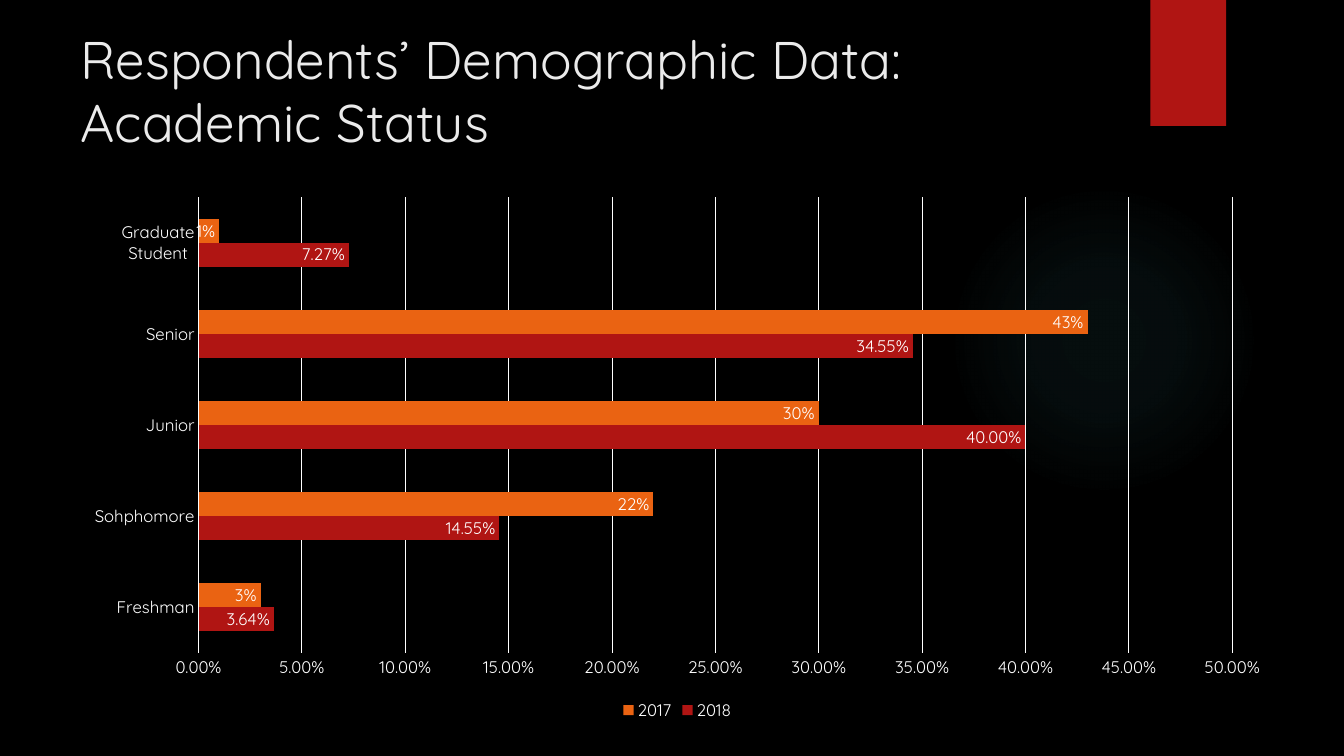
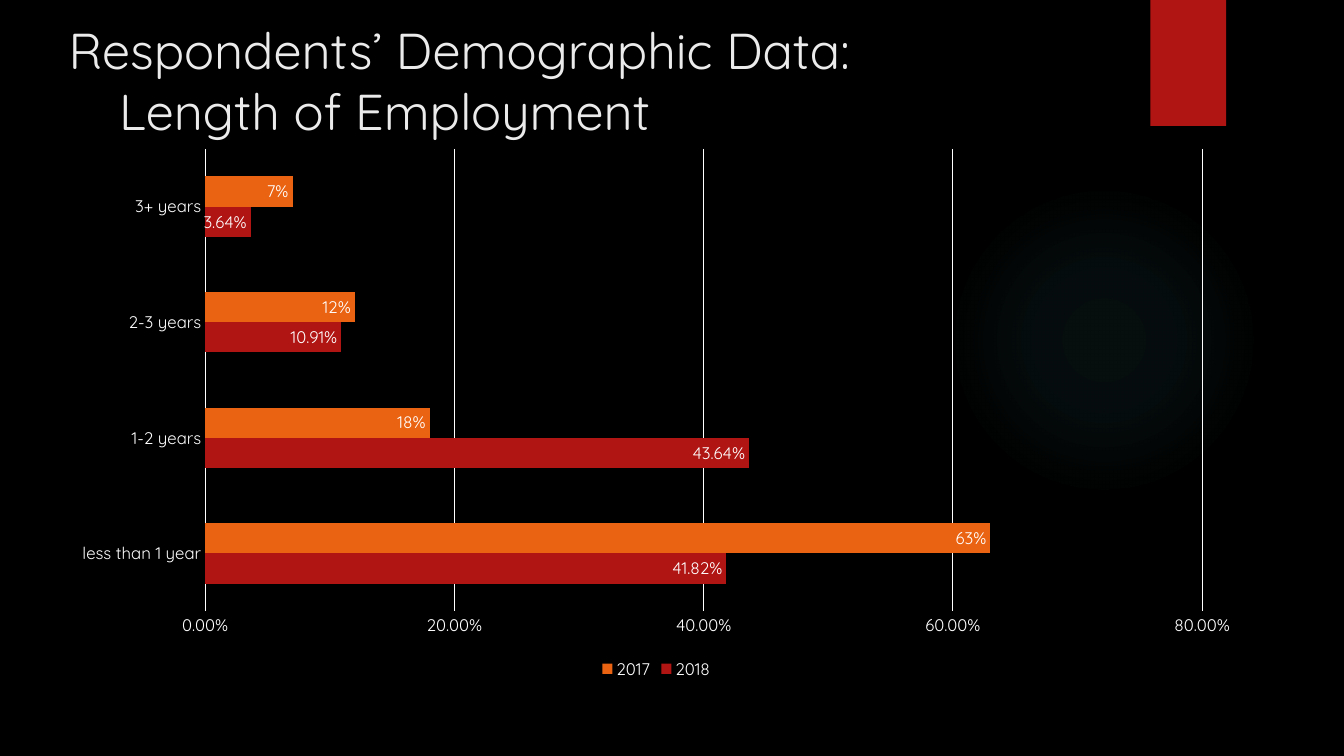
from lxml import etree
from pptx import Presentation
from pptx.chart.data import CategoryChartData
from pptx.dml.color import RGBColor
from pptx.enum.chart import XL_CHART_TYPE, XL_LABEL_POSITION, XL_LEGEND_POSITION, XL_TICK_MARK
from pptx.enum.shapes import MSO_SHAPE
from pptx.enum.text import MSO_ANCHOR, MSO_AUTO_SIZE, PP_ALIGN
from pptx.oxml.ns import qn
from pptx.util import Pt

BARS = XL_CHART_TYPE.BAR_CLUSTERED
IN_END = XL_LABEL_POSITION.INSIDE_END
BOTTOM = XL_LEGEND_POSITION.BOTTOM
NO_TICK = XL_TICK_MARK.NONE
RECT, OVAL = MSO_SHAPE.RECTANGLE, MSO_SHAPE.OVAL
TOP, LEFT, FIXED = MSO_ANCHOR.TOP, PP_ALIGN.LEFT, MSO_AUTO_SIZE.NONE

FACE = "Quicksand"
BLACK, WHITE, PALE = "000000", "FFFFFF", "EBEBEB"
RED, ORANGE, TEAL = "B01513", "EA6312", "50B9C1"
GLOW = [(0, 7), (36, 6), (69, 0)]  # stop %, opacity %

# Series style: name, colour, label format
YEARS = [("2018", RED, "0.00%"), ("2017", ORANGE, "0%")]

# Boxes are left, top, width, height in points
SLIDES = [
    {
        "title": "Respondents’ Demographic Data: Academic Status",
        "size": 37.8, "indent": 0, "head": (50.4, 15.1, 780.5, 70.6),
        "box": (50.4, 133.2, 866.9, 384.5), "max": 0.5, "step": 0.05,
        "rows": [
            ("Freshman", 0.0364, 0.03),
            ("Sohphomore", 0.1455, 0.22),
            ("Junior", 0.4, 0.3),
            ("Senior", 0.3455, 0.43),
            ("Graduate Student", 0.0727, 0.01),
        ],
    },
    {
        "title": "Respondents’ Demographic Data:\vLength of Employment",
        "size": 36, "indent": 36, "head": (41.8, 10.1, 780.5, 62.6),
        "box": (41.8, 98.6, 853.9, 389.5), "max": 0.8, "step": 0.2,
        "rows": [
            ("less than 1 year", 0.4182, 0.63),
            ("1-2 years", 0.4364, 0.18),
            ("2-3 years", 0.1091, 0.12),
            ("3+ years", 0.0364, 0.07),
        ],
    },
]


def rgb(code):
    return RGBColor.from_string(code)


def style(font, size=12, color=WHITE):
    font.name, font.size, font.bold = FACE, Pt(size), False
    font.color.rgb = rgb(color)


def write(frame, text, size, color, indent=0):
    frame.text = text
    frame.word_wrap, frame.auto_size = True, FIXED
    frame.vertical_anchor = TOP
    para = frame.paragraphs[0]
    para.alignment = LEFT
    # Hanging indent: only the lines after the first move right
    props = para._p.get_or_add_pPr()
    props.set("marL", str(Pt(indent)))
    props.set("indent", str(-Pt(indent)))
    for run in para.runs:
        style(run.font, size, color)


def glow(shape):
    """Fill with a soft circular gradient."""
    shape.fill.background()
    old = shape.element.spPr.find(qn("a:noFill"))
    grad = etree.Element(qn("a:gradFill"), rotWithShape="1")
    stops = etree.SubElement(grad, qn("a:gsLst"))
    for pos, alpha in GLOW:
        stop = etree.SubElement(stops, qn("a:gs"), pos=str(pos * 1000))
        tint = etree.SubElement(stop, qn("a:srgbClr"), val=TEAL)
        etree.SubElement(tint, qn("a:alpha"), val=str(alpha * 1000))
    focus = etree.SubElement(grad, qn("a:path"), path="circle")
    sides = dict.fromkeys("ltrb", "50000")
    etree.SubElement(focus, qn("a:fillToRect"), **sides)
    old.getparent().replace(old, grad)


def decor(slide, master):
    """Put the backdrop, glow and red band on the master."""
    fill = master.background.fill
    fill.solid()
    fill.fore_color.rgb = rgb(BLACK)
    halo = slide.shapes.add_shape(OVAL, Pt(677.5), Pt(131.8), Pt(221.8), Pt(221.8))
    glow(halo)
    band = slide.shapes.add_shape(RECT, Pt(821.8), 0, Pt(54), Pt(90))
    band.fill.solid()
    band.fill.fore_color.rgb = rgb(RED)
    for shape in (halo, band):
        shape.line.fill.background()
        shape.shadow.inherit = False
        master.shapes.element.append(shape.element)


def rule(line):
    line.color.rgb = rgb(WHITE)
    line.width = Pt(0.75)


def plot(slide, item):
    """Draw the clustered bars for both years."""
    names, *values = zip(*item["rows"])
    data = CategoryChartData()
    data.categories = names
    for (year, _, form), vals in zip(YEARS, values):
        data.add_series(year, vals, number_format=form)
    chart = slide.shapes.add_chart(BARS, *map(Pt, item["box"]), data).chart
    style(chart.font)
    chart.has_title = False
    chart.has_legend = True
    chart.legend.position = BOTTOM
    chart.legend.include_in_layout = False
    style(chart.legend.font)

    # Bars and labels
    bars = chart.plots[0]
    bars.gap_width, bars.vary_by_categories = 182, False
    for series, (_, color, form) in zip(bars.series, YEARS):
        series.format.fill.solid()
        series.format.fill.fore_color.rgb = rgb(color)
        tags = series.data_labels
        tags.show_value, tags.position = True, IN_END
        tags.number_format, tags.number_format_is_linked = form, False
        style(tags.font)

    # Axes
    cat, val = chart.category_axis, chart.value_axis
    for axis in (cat, val):
        axis.major_tick_mark = axis.minor_tick_mark = NO_TICK
        style(axis.tick_labels.font)
    rule(cat.format.line)
    val.format.line.fill.background()
    val.has_major_gridlines = True
    rule(val.major_gridlines.format.line)
    val.minimum_scale, val.maximum_scale = 0, item["max"]
    val.major_unit = item["step"]
    val.tick_labels.number_format = "0.00%"
    val.tick_labels.number_format_is_linked = False


def main():
    deck = Presentation()
    deck.slide_width, deck.slide_height = Pt(960), Pt(540)
    layout = deck.slide_layouts[5]
    for num, item in enumerate(SLIDES):
        slide = deck.slides.add_slide(layout)
        if num == 0:
            decor(slide, deck.slide_master)
        title = slide.shapes.title
        title.left, title.top, title.width, title.height = map(Pt, item["head"])
        write(title.text_frame, item["title"], item["size"], PALE, item["indent"])
        plot(slide, item)
    deck.save("out.pptx")


if __name__ == "__main__":
    main()
